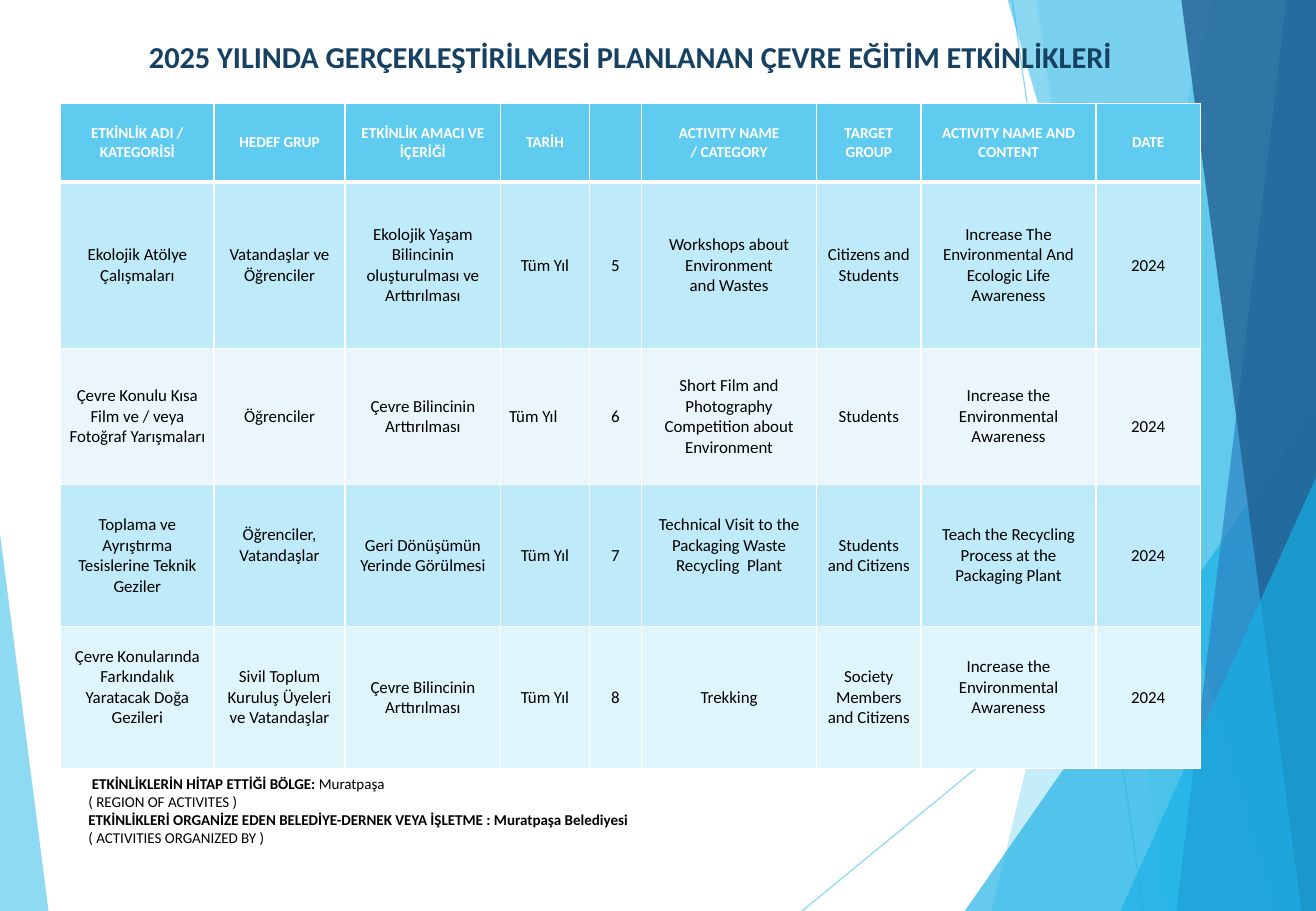
from pptx import Presentation
from pptx.dml.color import RGBColor
from pptx.enum import shapes, text
from pptx.oxml import parse_xml
from pptx.oxml.ns import nsdecls, qn
from pptx.util import Inches, Pt

WIDTH, HEIGHT = 10.83, 7.5
SKY = RGBColor(0x5F, 0xCB, 0xEF)
CYAN = RGBColor(0x17, 0xB0, 0xE4)
BLUE = RGBColor(0x2E, 0x83, 0xC3)
DEEP = RGBColor(0x22, 0x62, 0x92)
NAVY = RGBColor(0x17, 0x41, 0x62)
BAND = RGBColor(0xBF, 0xEA, 0xF9)
PALE = RGBColor(0xEA, 0xF6, 0xFC)
LIGHT = RGBColor(0xDF, 0xF5, 0xFC)
WHITE = RGBColor(0xFF, 0xFF, 0xFF)
BLACK = RGBColor(0, 0, 0)
CENTER, LEFT = text.PP_ALIGN.CENTER, text.PP_ALIGN.LEFT

COLUMNS = [1.26, 1.08, 1.28, 0.73, 0.43, 1.44, 0.86, 1.44, 0.86]
ROWS = [0.65, 1.37, 1.12, 1.17, 1.17]
ROW_FILLS = [SKY, BAND, PALE, BAND, LIGHT]
ACTIVITIES = [
    ["ETKİNLİK ADI / KATEGORİSİ", "HEDEF GRUP", "ETKİNLİK AMACI VE İÇERİĞİ", "TARİH", "",
     "ACTIVITY NAME\n/ CATEGORY", "TARGET GROUP", "ACTIVITY NAME AND CONTENT", "DATE"],
    ["Ekolojik Atölye Çalışmaları", "Vatandaşlar ve Öğrenciler",
     "Ekolojik Yaşam Bilincinin oluşturulması ve Arttırılması", "Tüm Yıl", "5",
     "Workshops about Environment\nand Wastes", "Citizens and Students",
     "Increase The Environmental And Ecologic Life Awareness", "2024"],
    ["Çevre Konulu Kısa Film ve / veya Fotoğraf Yarışmaları", "Öğrenciler",
     "Çevre Bilincinin Arttırılması", "Tüm Yıl", "6",
     "Short Film and Photography Competition about Environment", "Students",
     "Increase the Environmental Awareness", "2024"],
    ["Toplama ve Ayrıştırma Tesislerine Teknik Geziler", "Öğrenciler, Vatandaşlar",
     "Geri Dönüşümün Yerinde Görülmesi", "Tüm Yıl", "7",
     "Technical Visit to the Packaging Waste Recycling  Plant", "Students and Citizens",
     "Teach the Recycling Process at the Packaging Plant", "2024"],
    ["Çevre Konularında Farkındalık Yaratacak Doğa Gezileri",
     "Sivil Toplum Kuruluş Üyeleri ve Vatandaşlar",
     "Çevre Bilincinin Arttırılması", "Tüm Yıl", "8", "Trekking",
     "Society Members and Citizens", "Increase the Environmental Awareness", "2024"],
]
LOWERED = {(2, 8)}
RAISED = {(3, 1), (3, 5), (4, 0), (4, 7)}
LEFT_ALIGNED = {(2, 3)}
CELL_MARGIN, LINE_SHIFT = 0.04, 0.17

REGION_NOTES = [
    [(" ETKİNLİKLERİN HİTAP ETTİĞİ BÖLGE: ", True), ("Muratpaşa", False)],
    [("( REGION OF ACTIVITES )", False)],
    [("ETKİNLİKLERİ ORGANİZE EDEN BELEDİYE-DERNEK VEYA İŞLETME : Muratpaşa Belediyesi", True)],
    [("( ACTIVITIES ORGANIZED BY )", False)],
]


def write(p, content, size=10, color=BLACK, bold=False, align=LEFT, font="Calibri"):
    """Add one formatted run to a paragraph."""
    p.alignment = align
    r = p.add_run()
    r.text = content
    r.font.name, r.font.size, r.font.bold = font, Pt(size), bold
    r.font.color.rgb = color


def set_opacity(shape, percent):
    for color in shape._element.spPr.iter(qn("a:srgbClr")):
        color.append(parse_xml(f'<a:alpha {nsdecls("a")} val="{percent * 1000}"/>'))


def set_borders(cell, bottom):
    """Draw white cell borders, 1 pt except for the given bottom width."""
    tcPr = cell._tc.get_or_add_tcPr()
    for i, (side, width) in enumerate([("L", 1), ("R", 1), ("T", 1), ("B", bottom)]):
        tcPr.insert(i, parse_xml(
            f'<a:ln{side} {nsdecls("a")} w="{Pt(width)}"><a:solidFill>'
            f'<a:srgbClr val="{WHITE}"/></a:solidFill></a:ln{side}>'))


class ActivitySlide:
    def __init__(self, prs):
        self.s = prs.slides.add_slide(prs.slide_layouts[5])

    def line(self, x1, y1, x2, y2):
        c = self.s.shapes.add_connector(
            shapes.MSO_CONNECTOR.STRAIGHT, *map(Inches, (x1, y1, x2, y2)))
        c.line.color.rgb, c.line.width = SKY, Pt(0.75)
        set_opacity(c, 70)
        c._element.spPr.append(parse_xml(f'<a:effectLst {nsdecls("a")}/>'))

    def paint(self, sp, color, opacity):
        sp.shadow.inherit = False
        sp.fill.solid()
        sp.fill.fore_color.rgb = color
        sp.line.fill.background()
        set_opacity(sp, opacity)

    def panel(self, top_x, bottom_x, color, opacity):
        """Fill from a slanted left edge to the right side of the slide."""
        corners = [(top_x, -0.01), (WIDTH, -0.01), (WIDTH, HEIGHT), (bottom_x, HEIGHT)]
        points = [(Inches(x), Inches(y)) for x, y in corners]
        builder = self.s.shapes.build_freeform(*points[0])
        builder.add_line_segments(points[1:], close=True)
        self.paint(builder.convert_to_shape(), color, opacity)

    def triangle(self, x, y, w, h, apex, color, opacity):
        sp = self.s.shapes.add_shape(
            shapes.MSO_SHAPE.ISOSCELES_TRIANGLE, *map(Inches, (x, y, w, h)))
        sp.adjustments[0] = apex
        self.paint(sp, color, opacity)

    def title(self, content, x, y, w, h):
        sp = self.s.shapes.title
        sp.left, sp.top, sp.width, sp.height = map(Inches, (x, y, w, h))
        sp._element.getparent().append(sp._element)
        tf = sp.text_frame
        tf.word_wrap, tf.auto_size = True, text.MSO_AUTO_SIZE.NONE
        tf.vertical_anchor = text.MSO_ANCHOR.TOP
        write(tf.paragraphs[0], content, size=18, color=NAVY, bold=True, align=CENTER)

    def table(self, x, y):
        table = self.s.shapes.add_table(
            len(ROWS), len(COLUMNS),
            *map(Inches, (x, y, sum(COLUMNS), sum(ROWS)))).table
        table.horz_banding = False
        for column, width in zip(table.columns, COLUMNS):
            column.width = Inches(width)
        for i, height in enumerate(ROWS):
            table.rows[i].height = Inches(height)
            for j, content in enumerate(ACTIVITIES[i]):
                self.cell(table.cell(i, j), content, i, j)

    def cell(self, cell, content, i, j):
        header = i == 0
        cell.fill.solid()
        cell.fill.fore_color.rgb = ROW_FILLS[i]
        set_borders(cell, bottom=3 if header else 1)
        cell.vertical_anchor = text.MSO_ANCHOR.MIDDLE
        cell.margin_left = cell.margin_right = Inches(0.07)
        cell.margin_top = Inches(CELL_MARGIN + LINE_SHIFT * ((i, j) in LOWERED))
        cell.margin_bottom = Inches(CELL_MARGIN + LINE_SHIFT * ((i, j) in RAISED))
        if not content:
            return
        tf = cell.text_frame
        for n, part in enumerate(content.split("\n")):
            p = tf.add_paragraph() if n else tf.paragraphs[0]
            write(p, part, size=9 if header else 10, color=WHITE if header else BLACK,
                  bold=header, align=LEFT if (i, j) in LEFT_ALIGNED else CENTER)

    def notes(self, lines, x, y, w, h):
        tf = self.s.shapes.add_textbox(*map(Inches, (x, y, w, h))).text_frame
        tf.word_wrap = True
        for n, runs in enumerate(lines):
            p = tf.add_paragraph() if n else tf.paragraphs[0]
            for content, bold in runs:
                write(p, content, size=8.9, bold=bold)


def main():
    prs = Presentation()
    prs.slide_width, prs.slide_height = Inches(WIDTH), Inches(HEIGHT)
    page = ActivitySlide(prs)
    page.line(8.33, 0, 9.41, HEIGHT)
    page.line(WIDTH, 4.03, 6.6, HEIGHT)
    page.panel(9.98, 8.16, SKY, 36)
    page.panel(8.53, 9.61, SKY, 20)
    page.triangle(7.94, 3.33, 2.9, 4.17, 1, CYAN, 66)
    page.panel(8.29, 10.49, CYAN, 50)
    page.panel(10.59, 9.68, BLUE, 70)
    page.panel(9.72, 10.71, DEEP, 80)
    page.triangle(9.22, 3.93, 1.61, 3.57, 1, CYAN, 66)
    page.triangle(0, 4.39, 0.4, 3.11, 0, SKY, 70)
    page.title("2025 YILINDA GERÇEKLEŞTİRİLMESİ PLANLANAN ÇEVRE EĞİTİM ETKİNLİKLERİ",
               1.02, 0.26, 8.34, 0.39)
    page.table(0.5, 0.85)
    page.notes(REGION_NOTES, 0.63, 6.33, 7.93, 0.7)
    prs.save("out.pptx")


if __name__ == "__main__":
    main()
